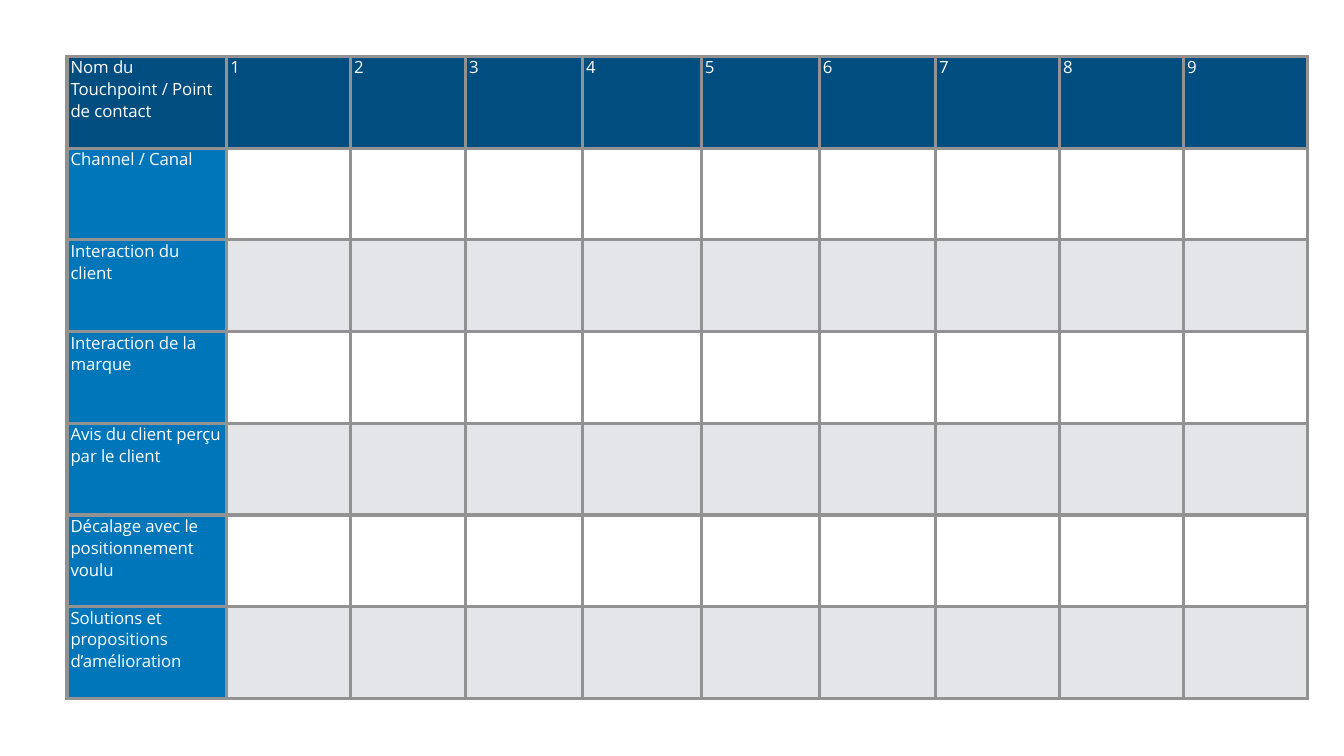
from lxml import etree
from pptx import Presentation
from pptx.dml.color import RGBColor
from pptx.oxml.ns import qn
from pptx.util import Inches, Pt

FONT = "Open Sans"
COLORS = {
    "header": "004D80",
    "label": "0076BA",
    "plain": "FFFFFF",
    "band": "E3E5E8",
    "border": "929292",
    "text": "FFFFFF",
}
HEADERS = ["Nom du Touchpoint / Point de contact", *map(str, range(1, 10))]
LABELS = [
    "Channel / Canal",
    "Interaction du client",
    "Interaction de la marque",
    "Avis du client perçu par le client",
    "Décalage avec le positionnement voulu",
    "Solutions et propositions d’amélioration",
]
COL_WIDTHS = [3.17, 2.46, 2.28, 2.32, 2.36, 2.34, 2.31, 2.46, 2.46, 2.46]
ROW_HEIGHT = 1.82
LEFT, TOP = 1.33, 1.12
BORDER_WIDTH = 5


def set_borders(cell):
    tc_pr = cell._tc.get_or_add_tcPr()
    for i, side in enumerate(("lnL", "lnR", "lnT", "lnB")):
        ln = etree.Element(qn(f"a:{side}"), w=str(Pt(BORDER_WIDTH)))
        fill = etree.SubElement(ln, qn("a:solidFill"))
        etree.SubElement(fill, qn("a:srgbClr"), val=COLORS["border"])
        tc_pr.insert(i, ln)


def set_text(cell, text):
    p = cell.text_frame.paragraphs[0]
    p.line_spacing = 0.95
    r = p.add_run()
    r.text = text
    r._r.get_or_add_rPr().set("spc", "-10")
    p.font.name = r.font.name = FONT
    p.font.size = r.font.size = Pt(24)
    r.font.color.rgb = RGBColor.from_string(COLORS["text"])


def cell_color(row, col):
    if row == 0:
        return COLORS["header"]
    if col == 0:
        return COLORS["label"]
    return COLORS["plain" if row % 2 else "band"]


def main():
    """Build the touchpoint table slide."""
    prs = Presentation()
    prs.slide_width, prs.slide_height = Inches(26.67), Inches(15)
    s = prs.slides.add_slide(prs.slide_layouts[6])

    rows = [HEADERS] + [[label] + [""] * 9 for label in LABELS]
    table = s.shapes.add_table(
        len(rows), len(COL_WIDTHS), Inches(LEFT), Inches(TOP),
        Inches(sum(COL_WIDTHS)), Inches(ROW_HEIGHT * len(rows)),
    ).table
    table.first_row = table.horz_banding = False
    for column, width in zip(table.columns, COL_WIDTHS):
        column.width = Inches(width)

    for i, texts in enumerate(rows):
        table.rows[i].height = Inches(ROW_HEIGHT)
        for j, text in enumerate(texts):
            cell = table.cell(i, j)
            cell.margin_left = cell.margin_right = Inches(0.07)
            cell.margin_top = cell.margin_bottom = 0
            cell.fill.solid()
            cell.fill.fore_color.rgb = RGBColor.from_string(cell_color(i, j))
            set_borders(cell)
            if text:
                set_text(cell, text)

    prs.save("out.pptx")


if __name__ == "__main__":
    main()
